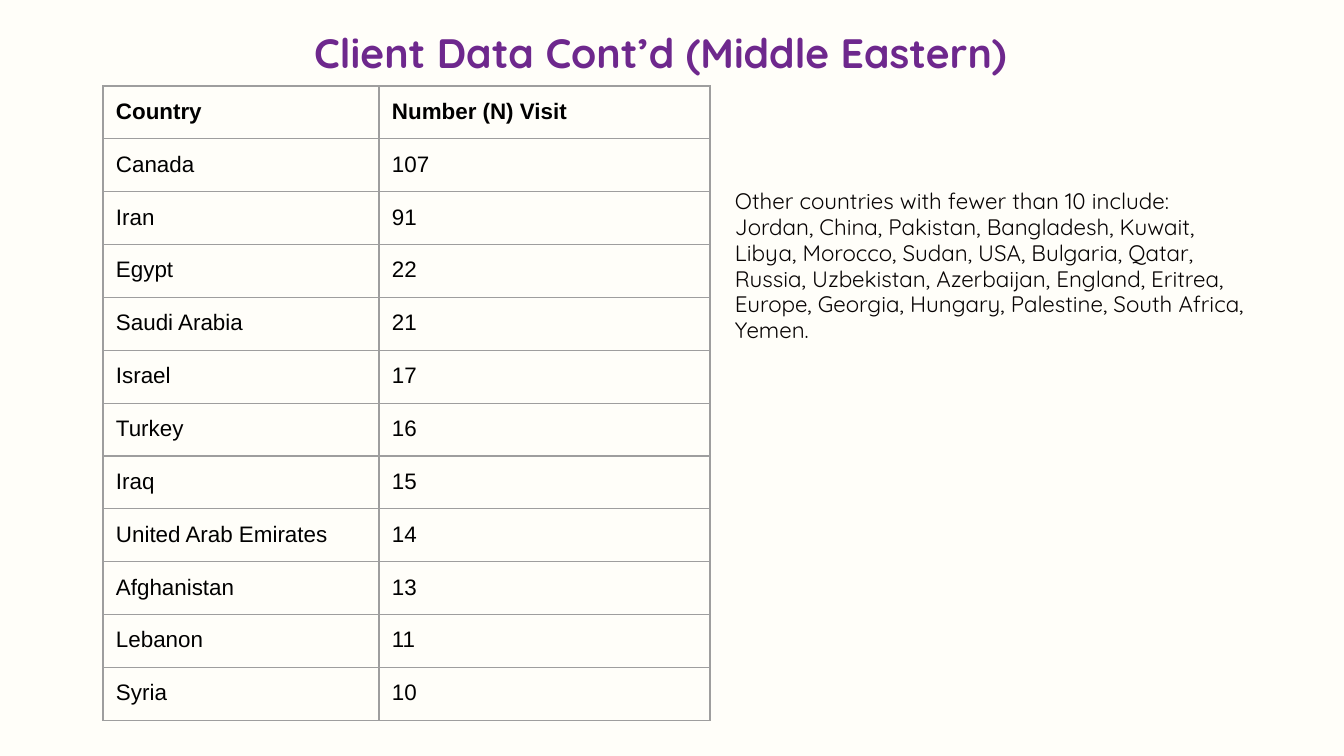
from lxml import etree
from pptx import Presentation
from pptx.dml.color import RGBColor
from pptx.enum.text import MSO_ANCHOR
from pptx.oxml.ns import qn
from pptx.util import Pt

MIDDLE, TOP = MSO_ANCHOR.MIDDLE, MSO_ANCHOR.TOP

CREAM = RGBColor(0xFF, 0xFE, 0xF9)
PURPLE = RGBColor(0x6E, 0x28, 0x8D)
BLACK = RGBColor(0x00, 0x00, 0x00)
INK = RGBColor(0x08, 0x04, 0x04)
GRAY = RGBColor(0x9E, 0x9E, 0x9E)

EMU_PER_PX = 914400 / 134.4
INSET = 13

VISITS = [
    ("Country", "Number (N) Visit"),
    ("Canada", "107"),
    ("Iran", "91"),
    ("Egypt", "22"),
    ("Saudi Arabia", "21"),
    ("Israel", "17"),
    ("Turkey", "16"),
    ("Iraq", "15"),
    ("United Arab Emirates", "14"),
    ("Afghanistan", "13"),
    ("Lebanon", "11"),
    ("Syria", "10"),
]
OTHERS = (
    "Other countries with fewer than 10 include: Jordan, China, Pakistan, "
    "Bangladesh, Kuwait, Libya, Morocco, Sudan, USA, Bulgaria, Qatar, Russia, "
    "Uzbekistan, Azerbaijan, England, Eritrea, Europe, Georgia, Hungary, "
    "Palestine, South Africa, Yemen."
)


def px(n):
    return round(n * EMU_PER_PX)


class Deck:
    def __init__(self, width, height):
        self.prs = Presentation()
        self.prs.slide_width, self.prs.slide_height = px(width), px(height)
        self.s = self.prs.slides.add_slide(self.prs.slide_layouts[6])
        fill = self.s.background.fill
        fill.solid()
        fill.fore_color.rgb = CREAM

    def style(self, p, size, font, color, bold=False):
        for r in p.runs:
            r.font.size, r.font.name, r.font.bold = Pt(size), font, bold
            r.font.color.rgb = color

    def margins(self, obj):
        obj.margin_left = obj.margin_right = px(INSET)
        obj.margin_top = obj.margin_bottom = px(INSET)

    def text(self, box, text, size, color, bold=False, anchor=TOP, spacing=None):
        tf = self.s.shapes.add_textbox(*map(px, box)).text_frame
        tf.word_wrap, tf.vertical_anchor = True, anchor
        self.margins(tf)
        tf.text = text
        p = tf.paragraphs[0]
        p.line_spacing = spacing
        self.style(p, size, "Quicksand", color, bold)

    def border(self, cell):
        tc_pr = cell._tc.get_or_add_tcPr()
        for i, side in enumerate(("a:lnL", "a:lnR", "a:lnT", "a:lnB")):
            ln = etree.Element(qn(side), w=str(Pt(0.75)))
            solid = etree.SubElement(ln, qn("a:solidFill"))
            etree.SubElement(solid, qn("a:srgbClr"), val=str(GRAY))
            tc_pr.insert(i, ln)

    def table(self, left, top, widths, row_height, rows):
        box = (left, top, sum(widths), row_height * len(rows))
        table = self.s.shapes.add_table(len(rows), len(widths), *map(px, box)).table
        table.horz_banding = False
        for column, width in zip(table.columns, widths):
            column.width = px(width)
        for i, row in enumerate(rows):
            for j, value in enumerate(row):
                cell = table.cell(i, j)
                cell.text = value
                cell.fill.background()
                self.margins(cell)
                self.border(cell)
                self.style(cell.text_frame.paragraphs[0], 12, "Arial", BLACK, i == 0)


def main():
    deck = Deck(1344, 756)

    # Title
    deck.text((301, 24, 742, 57), "Client Data Cont’d (Middle Eastern)", 22, PURPLE,
              bold=True, anchor=MIDDLE)

    # Visits by country
    deck.table(103, 86, (276, 331), 52, VISITS)

    # Remaining countries
    deck.text((722, 176, 543, 155), OTHERS, 12, INK, spacing=0.96)

    deck.prs.save("out.pptx")


if __name__ == "__main__":
    main()
